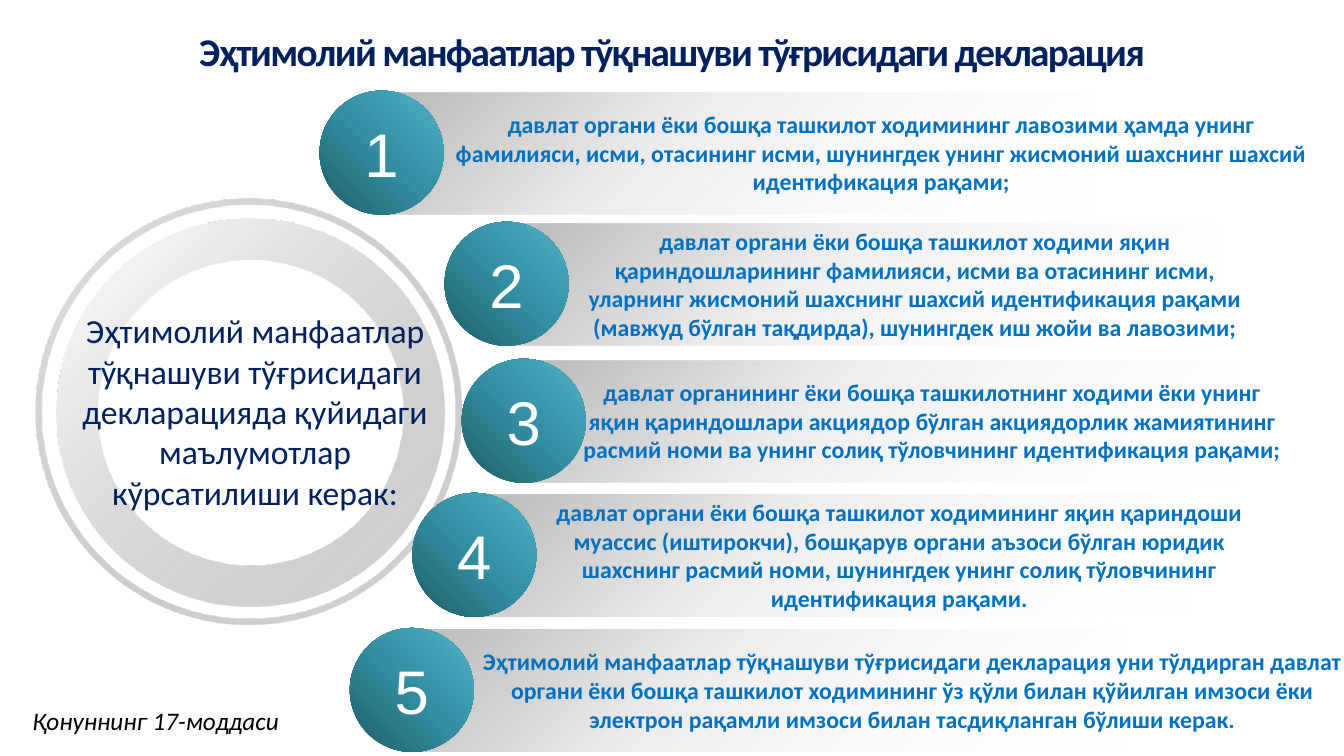
"""Build a slide on what a conflict-of-interest declaration must contain."""
from dataclasses import dataclass

from pptx import Presentation
from pptx.dml.color import RGBColor
from pptx.enum.shapes import MSO_SHAPE
from pptx.enum.text import MSO_ANCHOR, MSO_AUTO_SIZE, PP_ALIGN
from pptx.oxml.ns import qn
from pptx.shapes.autoshape import Shape
from pptx.shapes.shapetree import SlideShapes
from pptx.text.text import TextFrame
from pptx.util import Inches, Pt
from lxml import etree

CENTER = PP_ALIGN.CENTER
TOP, MIDDLE = MSO_ANCHOR.TOP, MSO_ANCHOR.MIDDLE
GROW = MSO_AUTO_SIZE.SHAPE_TO_FIT_TEXT
DONUT, OVAL, RECTANGLE = MSO_SHAPE.DONUT, MSO_SHAPE.OVAL, MSO_SHAPE.RECTANGLE

COLORS = {
    "navy": "002060", "blue": "0070C0", "black": "000000", "white": "FFFFFF",
    "pale": "F2F2F2", "light": "D9D9D9", "silver": "BFBFBF", "gray": "A6A6A6",
    "deep_teal": "215E6B", "teal": "328EA0", "bright_teal": "50B4C8",
}
BAR_WIDTH, BAR_HEIGHT = 7.07, 1.21
BADGE_SIZE = 1.23


@dataclass(frozen=True)
class Stop:
    """A gradient stop: position and opacity in percent."""
    position: int
    color: str
    opacity: int = 100


@dataclass(frozen=True)
class Style:
    """The look of a run of text."""
    size: int
    color: str
    font: str = "Calibri"
    bold: bool = False
    italic: bool = False


@dataclass(frozen=True)
class Ring:
    """A ring around the central statement."""
    left: float
    top: float
    size: float
    thickness: float
    inner_color: str


@dataclass(frozen=True)
class Item:
    """A numbered requirement, placed by its badge."""
    left: float
    top: float
    text_left: float
    text_width: float
    text_height: float
    text: str


BAR_STOPS = [Stop(5, "silver"), Stop(37, "silver", 31), Stop(100, "white", 0)]
BADGE_STOPS = [Stop(0, "deep_teal"), Stop(50, "teal"), Stop(100, "bright_teal")]
TITLE_STYLE = Style(28, "navy", bold=True)
STATEMENT_STYLE = Style(24, "navy")
ITEM_STYLE = Style(17, "blue", bold=True)
BADGE_STYLE = Style(44, "white", font="Arial")
SOURCE_STYLE = Style(18, "black", italic=True)

TITLE = "Эҳтимолий манфаатлар тўқнашуви тўғрисидаги декларация"
STATEMENT = ("Эҳтимолий манфаатлар тўқнашуви тўғрисидаги декларацияда "
             "қуйидаги маълумотлар кўрсатилиши керак:")
SOURCE = "Қонуннинг 17-моддаси"
RINGS = [
    Ring(0.56, 2.17, 3.85, 0.107, "pale"),
    Ring(0.35, 1.97, 4.23, 0.015, "light"),
]
ITEMS = [
    Item(3.17, 0.9, 4.37, 8.74, 0.96,
         "давлат органи ёки бошқа ташкилот ходимининг лавозими ҳамда унинг "
         "фамилияси, исми, отасининг исми, шунингдек унинг жисмоний шахснинг "
         "шахсий идентификация рақами;"),
    Item(4.41, 2.2, 5.51, 7.13, 1.25,
         "давлат органи ёки бошқа ташкилот ходими яқин қариндошларининг "
         "фамилияси, исми ва отасининг исми, уларнинг жисмоний шахснинг шахсий "
         "идентификация рақами (мавжуд бўлган тақдирда), шунингдек иш жойи ва "
         "лавозими;"),
    Item(4.58, 3.56, 5.68, 7.13, 0.96,
         "давлат органининг ёки бошқа ташкилотнинг ходими ёки унинг яқин "
         "қариндошлари акциядор бўлган акциядорлик жамиятининг расмий номи ва "
         "унинг солиқ тўловчининг идентификация рақами;"),
    Item(4.09, 4.89, 5.19, 7.46, 1.25,
         "давлат органи ёки бошқа ташкилот ходимининг яқин қариндоши муассис "
         "(иштирокчи), бошқарув органи аъзоси бўлган юридик шахснинг расмий "
         "номи, шунингдек унинг солиқ тўловчининг идентификация рақами."),
    Item(3.47, 6.23, 4.68, 8.74, 0.96,
         "Эҳтимолий манфаатлар тўқнашуви тўғрисидаги декларация уни тўлдирган "
         "давлат органи ёки бошқа ташкилот ходимининг ўз қўли билан қўйилган "
         "имзоси ёки электрон рақамли имзоси билан тасдиқланган бўлиши керак."),
]


def write(frame: TextFrame, text: str, style: Style, anchor: MSO_ANCHOR) -> None:
    """Put one centred, styled paragraph into a text frame."""
    frame.text = text
    frame.word_wrap = True
    frame.vertical_anchor = anchor
    para = frame.paragraphs[0]
    para.alignment = CENTER
    font = para.runs[0].font
    font.name, font.size = style.font, Pt(style.size)
    font.bold, font.italic = style.bold, style.italic
    font.color.rgb = RGBColor.from_string(COLORS[style.color])


def fill_gradient(shape: Shape, stops: list[Stop], angle: int) -> None:
    """Fill a shape with a linear gradient, the angle running clockwise."""
    shape.fill.gradient()
    gradient = shape._element.spPr.find(qn("a:gradFill"))
    gradient.clear()
    stop_list = etree.SubElement(gradient, qn("a:gsLst"))
    for stop in stops:
        mark = etree.SubElement(stop_list, qn("a:gs"), pos=str(stop.position * 1000))
        color = etree.SubElement(mark, qn("a:srgbClr"), val=COLORS[stop.color])
        if stop.opacity < 100:
            etree.SubElement(color, qn("a:alpha"), val=str(stop.opacity * 1000))
    etree.SubElement(gradient, qn("a:lin"), ang=str(angle * 60000), scaled="0")


def add_figure(shapes: SlideShapes, kind: MSO_SHAPE, left: float, top: float,
               width: float, height: float, stops: list[Stop], angle: int) -> Shape:
    """Add a borderless shape with a gradient fill."""
    figure = shapes.add_shape(kind, Inches(left), Inches(top), Inches(width), Inches(height))
    figure.shadow.inherit = False
    figure.line.fill.background()
    fill_gradient(figure, stops, angle)
    return figure


def add_label(shapes: SlideShapes, left: float, top: float, width: float, height: float,
              text: str, style: Style, anchor: MSO_ANCHOR = TOP) -> Shape:
    """Add a text box that grows with its text."""
    box = shapes.add_textbox(Inches(left), Inches(top), Inches(width), Inches(height))
    write(box.text_frame, text, style, anchor)
    box.text_frame.auto_size = GROW
    return box


def add_item(shapes: SlideShapes, number: int, item: Item) -> None:
    """Add a group of a bar, its text and a numbered badge."""
    group = shapes.add_group_shape().shapes
    add_figure(group, RECTANGLE, item.left + 0.63, item.top + 0.02,
               BAR_WIDTH, BAR_HEIGHT, BAR_STOPS, 45)
    text_top = item.top + (BADGE_SIZE - item.text_height) / 2
    add_label(group, item.text_left, text_top, item.text_width, item.text_height,
              item.text, ITEM_STYLE, MIDDLE)
    badge = add_figure(group, OVAL, item.left, item.top,
                       BADGE_SIZE, BADGE_SIZE, BADGE_STOPS, 315)
    frame = badge.text_frame
    frame.margin_left = frame.margin_right = Inches(0.08)
    frame.margin_top = frame.margin_bottom = Inches(0.1)
    write(frame, str(number), BADGE_STYLE, MIDDLE)


def main() -> None:
    """Build and save the deck."""
    deck = Presentation()
    deck.slide_width, deck.slide_height = Inches(13.33), Inches(7.5)
    page = deck.slides.add_slide(deck.slide_layouts[5])
    shapes = page.shapes

    title = shapes.title
    title.left, title.top = Inches(0), Inches(0)
    title.width, title.height = Inches(13.33), Inches(1.09)
    write(title.text_frame, TITLE, TITLE_STYLE, MIDDLE)
    heading = title.text_frame.paragraphs[0]
    heading.line_spacing = 0.85
    heading.runs[0].font._element.set("spc", "-120")

    for ring in RINGS:
        stops = [Stop(16, ring.inner_color), Stop(87, "gray", 52)]
        donut = add_figure(shapes, DONUT, ring.left, ring.top, ring.size, ring.size, stops, 45)
        donut.adjustments[0] = ring.thickness
    statement = add_label(shapes, 0.65, 3.03, 3.76, 2.12, STATEMENT, STATEMENT_STYLE)
    statement.text_frame.paragraphs[0].space_before = Pt(5)

    for number, item in enumerate(ITEMS, start=1):
        add_item(shapes, number, item)
    add_label(shapes, -0.69, 6.95, 4.47, 0.4, SOURCE, SOURCE_STYLE)
    deck.save("out.pptx")


if __name__ == "__main__":
    main()
